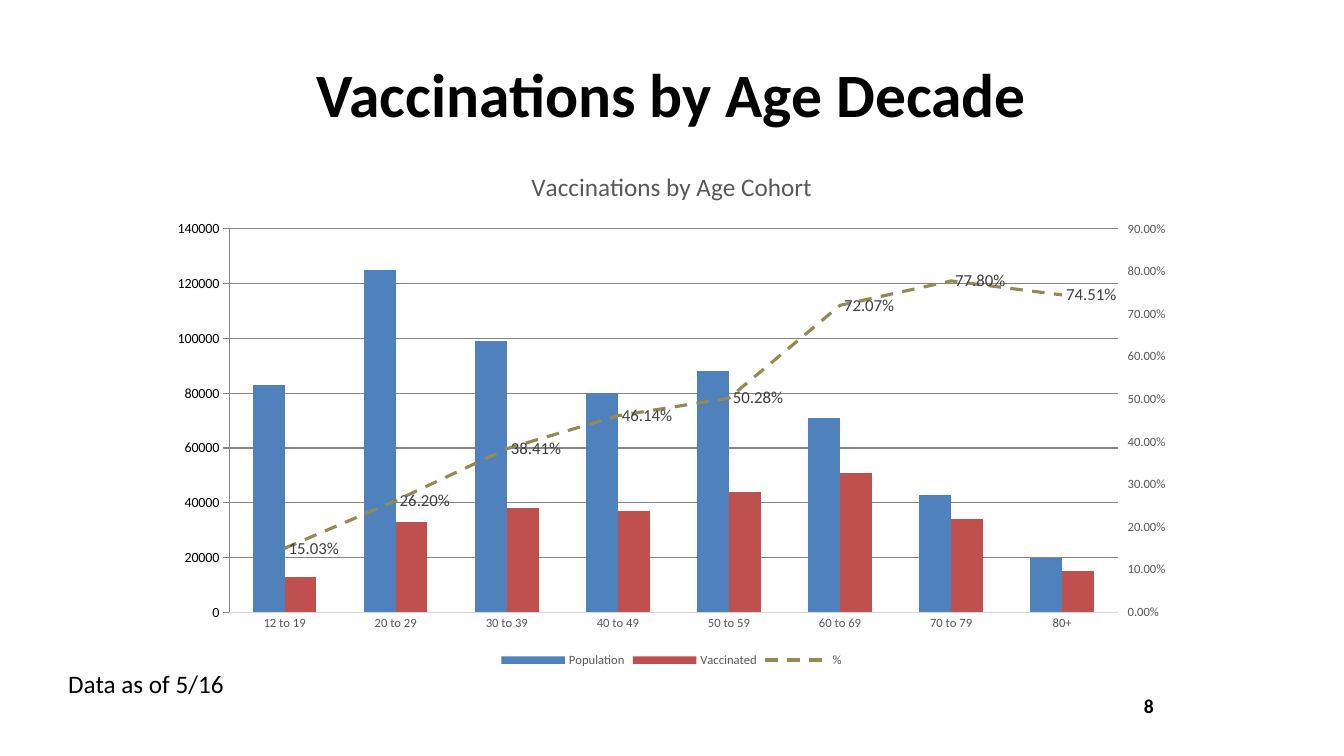
from pptx import Presentation
from pptx.chart.axis import ValueAxis
from pptx.chart.data import CategoryChartData
from pptx.dml.color import RGBColor
from pptx.enum.chart import (XL_CHART_TYPE, XL_LABEL_POSITION,
                             XL_LEGEND_POSITION, XL_MARKER_STYLE, XL_TICK_MARK)
from pptx.enum.dml import MSO_LINE
from pptx.enum.text import MSO_ANCHOR, PP_ALIGN
from pptx.oxml import parse_xml
from pptx.oxml.ns import nsdecls, qn
from pptx.util import Cm, Pt

# Content
TITLE = "Vaccinations by Age Decade"
CHART_TITLE = "Vaccinations by Age Cohort"
NOTE = "Data as of 5/16"
PAGE = "8"
AGES = ["12 to 19", "20 to 29", "30 to 39", "40 to 49",
        "50 to 59", "60 to 69", "70 to 79", "80+"]
COUNTS = {
    "Population": [83000, 125000, 99000, 80000, 88000, 71000, 43000, 20000],
    "Vaccinated": [13000, 33000, 38000, 37000, 44000, 51000, 34000, 15000],
}
SHARE = [0.1503, 0.262, 0.3841, 0.4614, 0.5028, 0.7207, 0.778, 0.7451]

# Style
FONT = "Calibri"
BLACK = RGBColor(0x00, 0x00, 0x00)
GRAY = RGBColor(0x59, 0x59, 0x59)
LABEL = RGBColor(0x40, 0x40, 0x40)
GRID = RGBColor(0xD9, 0xD9, 0xD9)
BLUE = RGBColor(0x4F, 0x81, 0xBD)
RED = RGBColor(0xC0, 0x50, 0x4D)
OLIVE = RGBColor(0x94, 0x8A, 0x54)
PERCENT = "0.00%"
NO_TICK, TICK_OUT = XL_TICK_MARK.NONE, XL_TICK_MARK.OUTSIDE

LINE_XML = f"""<c:lineChart {nsdecls('c')}>
  <c:grouping val="standard"/><c:varyColors val="0"/>
  <c:marker val="1"/><c:axId val="5001"/><c:axId val="5002"/>
</c:lineChart>"""
RIGHT_AXIS_XML = f"""<c:valAx {nsdecls('c')}>
  <c:axId val="5002"/><c:scaling><c:orientation val="minMax"/></c:scaling>
  <c:delete val="0"/><c:axPos val="r"/><c:tickLblPos val="nextTo"/>
  <c:crossAx val="5001"/><c:crosses val="max"/>
</c:valAx>"""
HIDDEN_AXIS_XML = f"""<c:catAx {nsdecls('c')}>
  <c:axId val="5001"/><c:scaling><c:orientation val="minMax"/></c:scaling>
  <c:delete val="1"/><c:axPos val="b"/>
  <c:crossAx val="5002"/><c:crosses val="autoZero"/>
</c:catAx>"""


def set_font(font, size, color, bold=False):
    font.name, font.size, font.bold = FONT, Pt(size), bold
    font.color.rgb = color


def add_text(slide, text, box, size, bold=False, align=PP_ALIGN.LEFT,
             anchor=MSO_ANCHOR.TOP):
    tf = slide.shapes.add_textbox(*map(Cm, box)).text_frame
    tf.word_wrap = True
    tf.vertical_anchor = anchor
    tf.text = text
    p = tf.paragraphs[0]
    p.alignment = align
    set_font(p.runs[0].font, size, BLACK, bold)


def style_axis(axis, tick, line=None):
    axis.major_tick_mark, axis.minor_tick_mark = tick, NO_TICK
    set_font(axis.tick_labels.font, 9, GRAY)
    if line is None:
        axis.format.line.fill.background()
    else:
        axis.format.line.color.rgb = line
        axis.format.line.width = Pt(0.75)


def scale_axis(axis, top, step):
    axis.minimum_scale, axis.maximum_scale, axis.major_unit = 0, top, step


def move_share_to_line(chart):
    """Turn the last series into a line on a right-hand axis."""
    bars = chart.plots[0]._element
    ser = bars.findall(qn("c:ser"))[-1]
    for flag in ser.findall(qn("c:invertIfNegative")):
        ser.remove(flag)
    line = parse_xml(LINE_XML)
    line.find(qn("c:marker")).addprevious(ser)
    bars.addnext(line)
    last_axis = bars.getparent().findall(qn("c:valAx"))[-1]
    right = parse_xml(RIGHT_AXIS_XML)
    last_axis.addnext(right)
    right.addnext(parse_xml(HIDDEN_AXIS_XML))
    return ValueAxis(right)


prs = Presentation()
prs.slide_width, prs.slide_height = Cm(33.87), Cm(19.05)
slide = prs.slides.add_slide(prs.slide_layouts[6])

# Title and page number
add_text(slide, TITLE, (1.69, 0.76, 30.48, 3.18), 44, True,
         PP_ALIGN.CENTER, MSO_ANCHOR.MIDDLE)
add_text(slide, PAGE, (28.58, 17.35, 5.29, 1.02), 14, True)

# Chart
data = CategoryChartData()
data.categories = AGES
for name, values in COUNTS.items():
    data.add_series(name, values, "General")
data.add_series("%", SHARE, PERCENT)
chart = slide.shapes.add_chart(
    XL_CHART_TYPE.COLUMN_CLUSTERED,
    Cm(3.96), Cm(3.76), Cm(25.93), Cm(13.16), data).chart
set_font(chart.font, 10, BLACK)

chart.has_title = True
tf = chart.chart_title.text_frame
tf.text = CHART_TITLE
set_font(tf.paragraphs[0].runs[0].font, 18, GRAY)
chart.chart_title.include_in_layout = False

chart.has_legend = True
chart.legend.position = XL_LEGEND_POSITION.BOTTOM
chart.legend.include_in_layout = False
set_font(chart.legend.font, 9, GRAY)

# Axes
right_axis = move_share_to_line(chart)
style_axis(chart.category_axis, NO_TICK, GRID)
style_axis(chart.value_axis, NO_TICK)
style_axis(right_axis, TICK_OUT)
scale_axis(chart.value_axis, 140000, 20000)
scale_axis(right_axis, 0.9, 0.1)
right_axis.tick_labels.number_format = PERCENT
right_axis.tick_labels.number_format_is_linked = False
grid = chart.value_axis.major_gridlines.format.line
grid.color.rgb, grid.width = GRID, Pt(0.75)

# Columns
columns, lines = chart.plots
columns.gap_width, columns.overlap = 150, 0
columns.vary_by_categories = False
for series, color in zip(columns.series, (BLUE, RED)):
    series.format.fill.solid()
    series.format.fill.fore_color.rgb = color

# Dashed share line
share = lines.series[0]
share.smooth = False
share.marker.style = XL_MARKER_STYLE.NONE
stroke = share.format.line
stroke.color.rgb, stroke.width = OLIVE, Pt(2.25)
stroke.dash_style = MSO_LINE.DASH
labels = share.data_labels
labels.show_value = True
labels.position = XL_LABEL_POSITION.RIGHT
labels.number_format = PERCENT
labels.number_format_is_linked = False
set_font(labels.font, 12, LABEL)

# Date note
add_text(slide, NOTE, (1.47, 16.71, 9.96, 1.02), 18)

prs.save("out.pptx")
